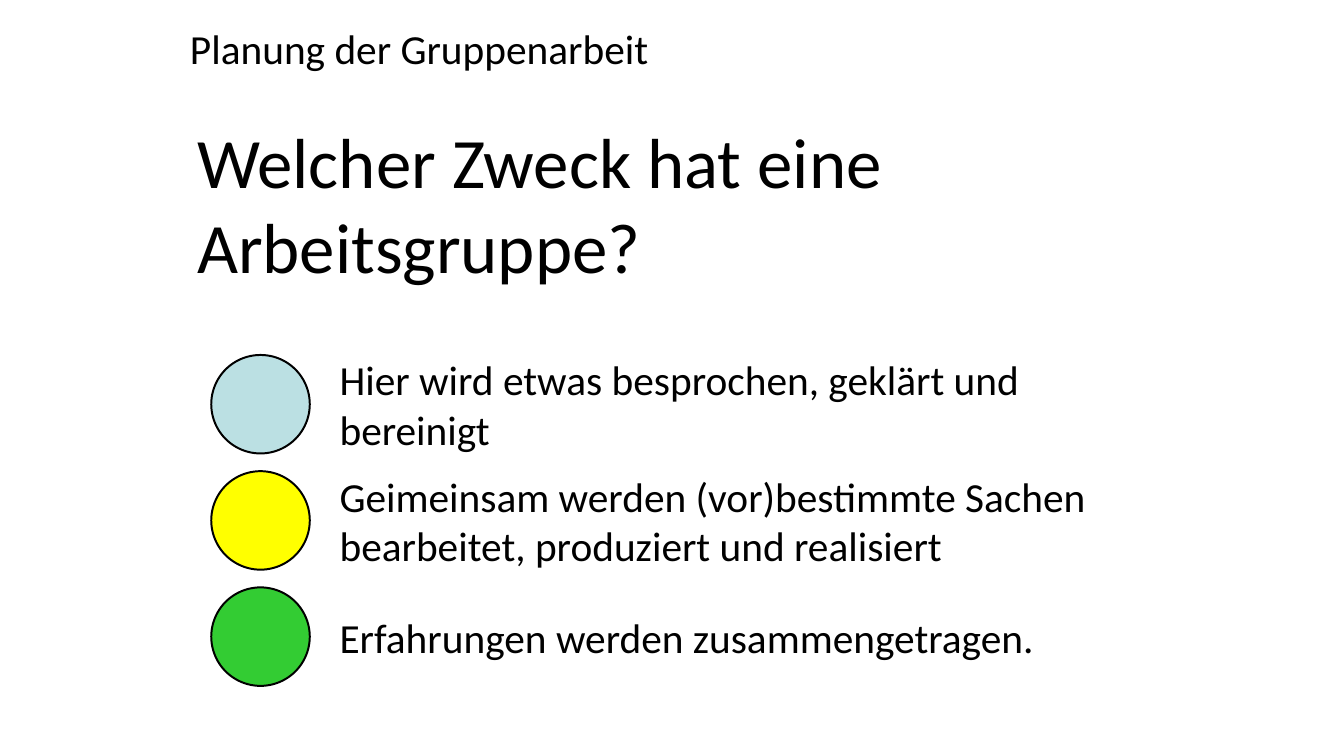
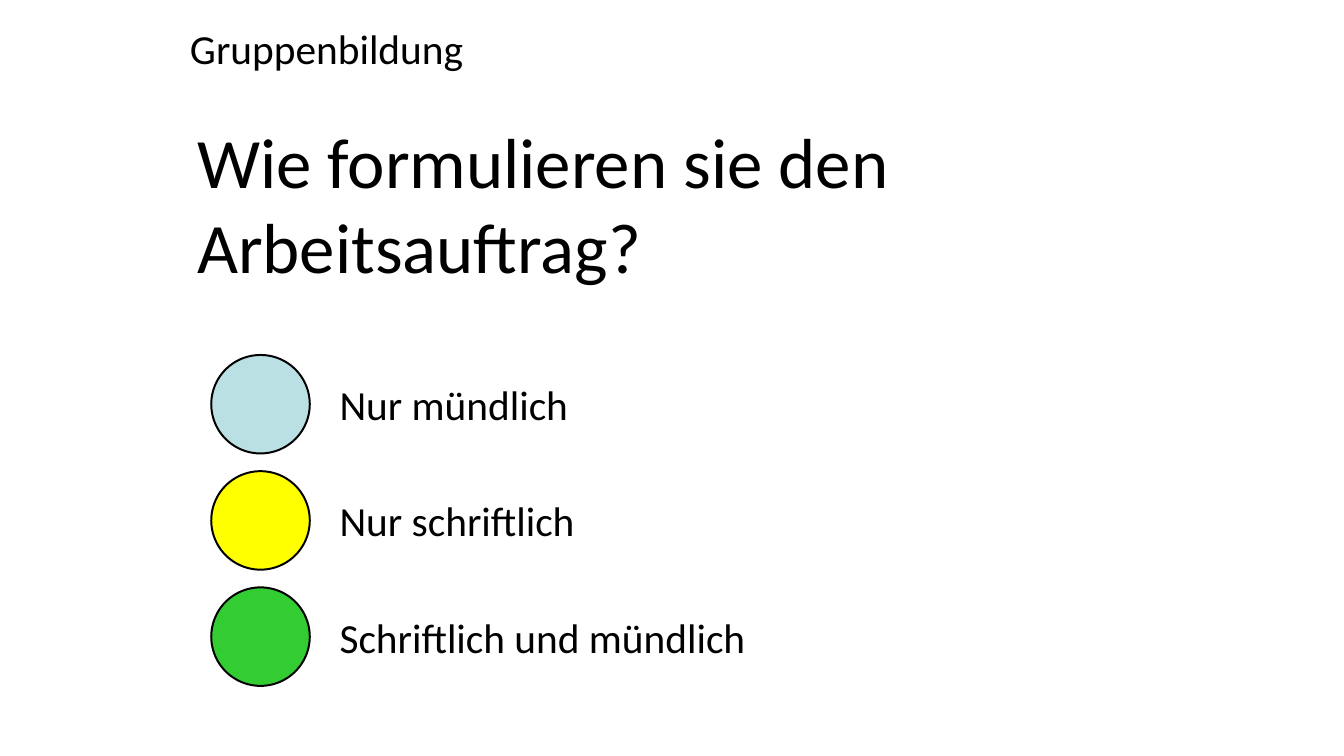
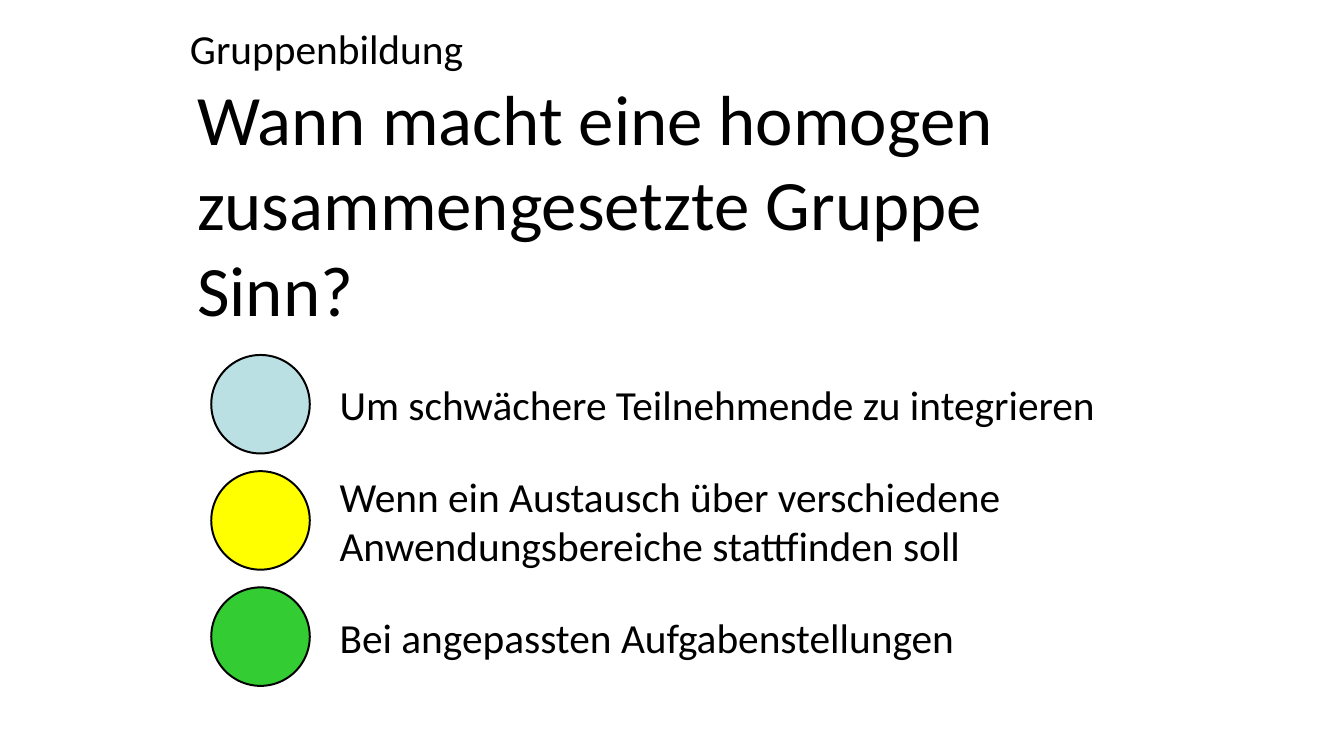
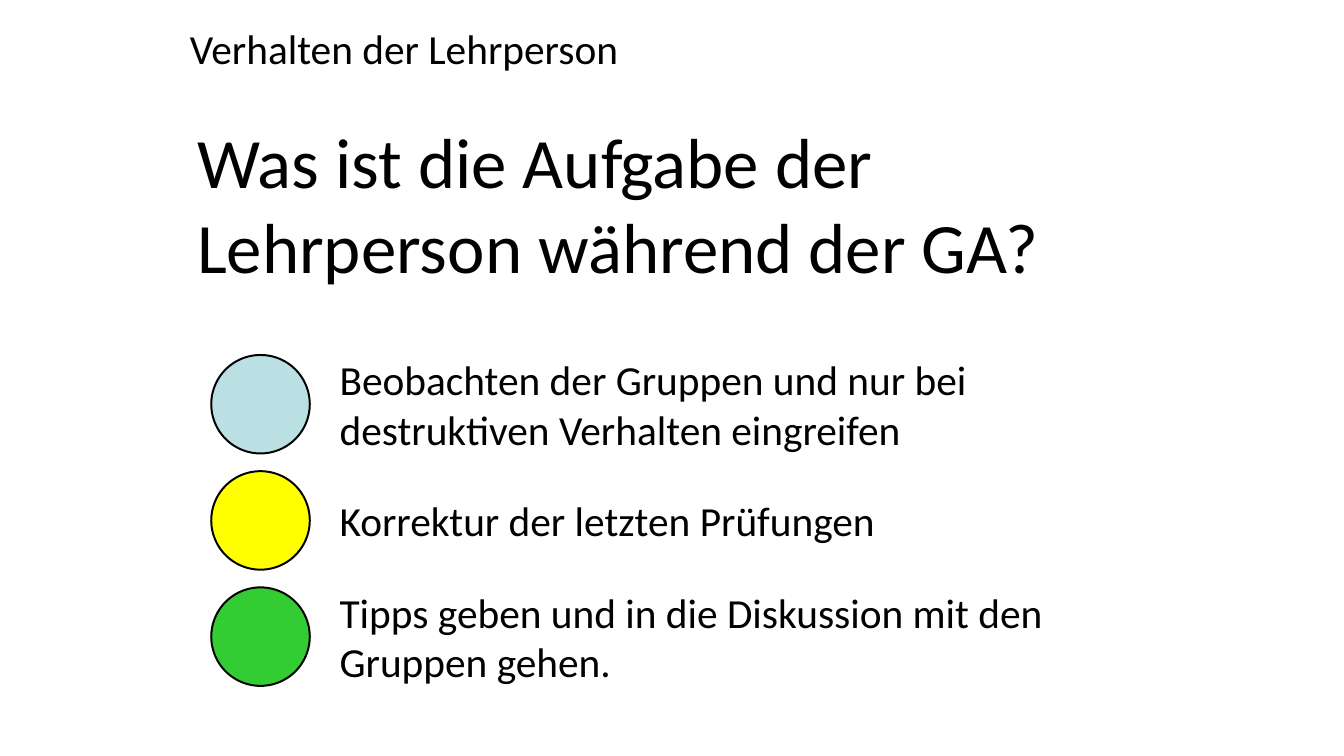
"""Build four quiz slides, each with a topic, a question and three answers."""
from pptx import Presentation
from pptx.dml.color import RGBColor
from pptx.enum.shapes import MSO_SHAPE
from pptx.enum.text import MSO_ANCHOR
from pptx.util import Pt

OVAL = MSO_SHAPE.OVAL
MIDDLE = MSO_ANCHOR.MIDDLE

QUIZ = [
    ("Planung der Gruppenarbeit", "Welcher Zweck hat eine Arbeitsgruppe?", [
        "Hier wird etwas besprochen, geklärt und bereinigt",
        "Geimeinsam werden (vor)bestimmte Sachen bearbeitet, produziert und realisiert",
        "Erfahrungen werden zusammengetragen.",
    ]),
    ("Gruppenbildung", "Wie formulieren sie den Arbeitsauftrag?", [
        "Nur mündlich",
        "Nur schriftlich",
        "Schriftlich und mündlich",
    ]),
    ("Gruppenbildung", "Wann macht eine homogen zusammengesetzte Gruppe Sinn?", [
        "Um schwächere Teilnehmende zu integrieren",
        "Wenn ein Austausch über verschiedene Anwendungsbereiche stattfinden soll",
        "Bei angepassten Aufgabenstellungen",
    ]),
    ("Verhalten der Lehrperson", "Was ist die Aufgabe der Lehrperson während der GA?", [
        "Beobachten der Gruppen und nur bei destruktiven Verhalten eingreifen",
        "Korrektur der letzten Prüfungen",
        "Tipps geben und in die Diskussion mit den Gruppen gehen.",
    ]),
]

COLORS = {"ink": "000000", "blue": "BBE0E3", "yellow": "FFFF00", "green": "33CC33"}
DOTS = ["blue", "yellow", "green"]
FONT = "Calibri"
SCALE = 9144
PAGE = (1896, 1067)
TOPIC = (268, 28, 1158, 79)
TITLE = (278, 165, 1342, 242)
DOT_X, DOT_Y, DOT, STEP = 298, 501, 139, 164
TEXT_X, TEXT_W, TEXT_H = 479, 1158, 79


def emu(box):
    """Turn px lengths into EMU."""
    return [n * SCALE for n in box]


def color(name):
    """Look up a named colour."""
    return RGBColor.from_string(COLORS[name])


def add_text(slide, text, box, size=42, ink="ink"):
    """Add a wrapped, vertically centred line of text."""
    frame = slide.shapes.add_textbox(*emu(box)).text_frame
    frame.word_wrap = True
    frame.vertical_anchor = MIDDLE
    frame.margin_left = frame.margin_right = 0
    frame.margin_top = frame.margin_bottom = 0
    run = frame.paragraphs[0].add_run()
    run.text = text
    run.font.name = FONT
    run.font.size = Pt(size)
    run.font.color.rgb = color(ink)


def add_dot(slide, top, fill):
    """Add one answer dot."""
    dot = slide.shapes.add_shape(OVAL, *emu((DOT_X, top, DOT, DOT)))
    dot.shadow.inherit = False
    dot.fill.solid()
    dot.fill.fore_color.rgb = color(fill)
    dot.line.color.rgb = color("ink")
    dot.line.width = Pt(2)


def add_quiz(deck, topic, title, answers):
    """Add one slide with its dots and answers."""
    slide = deck.slides.add_slide(deck.slide_layouts[6])
    add_text(slide, title, TITLE, size=72)
    add_text(slide, topic, TOPIC)
    for row, (fill, answer) in enumerate(zip(DOTS, answers)):
        top = DOT_Y + row * STEP
        add_dot(slide, top, fill)
        add_text(slide, answer, (TEXT_X, top + (DOT - TEXT_H) // 2, TEXT_W, TEXT_H))


def main():
    """Build and save the deck."""
    deck = Presentation()
    deck.slide_width, deck.slide_height = emu(PAGE)
    for topic, title, answers in QUIZ:
        add_quiz(deck, topic, title, answers)
    deck.save("out.pptx")


if __name__ == "__main__":
    main()
